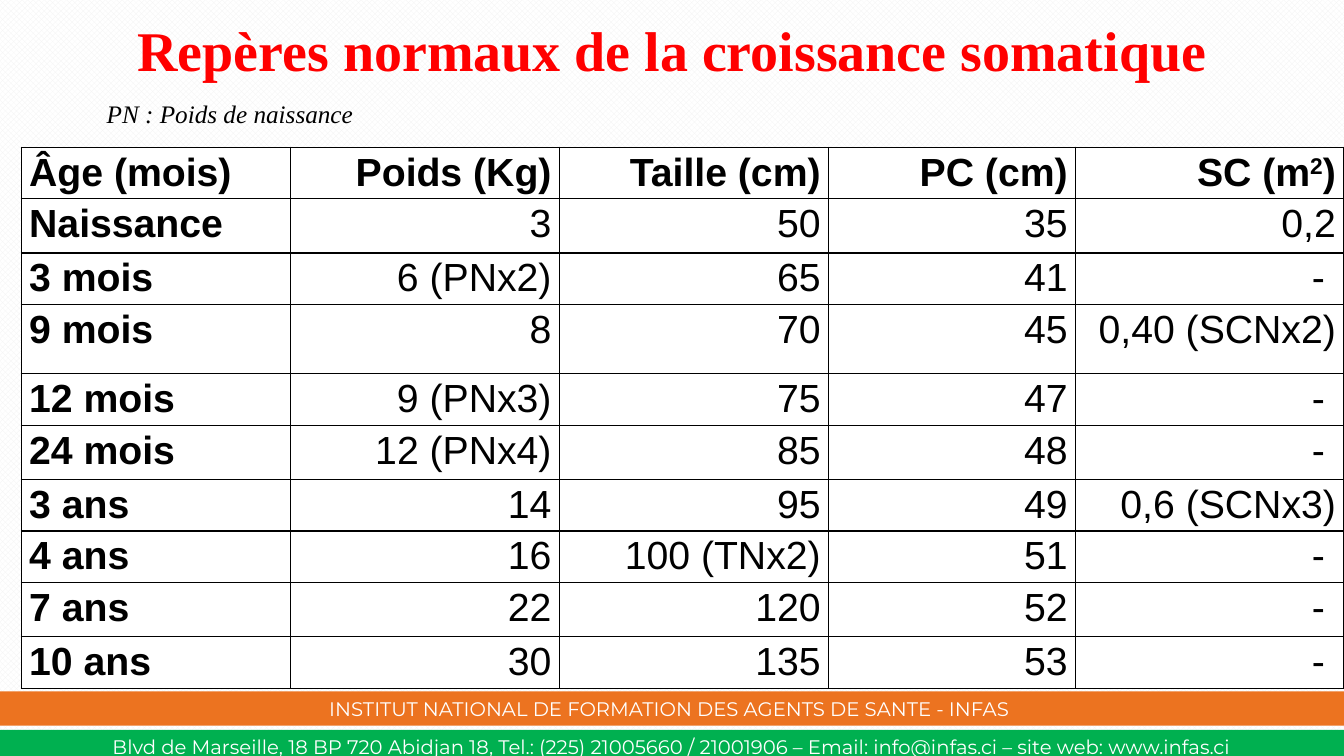
from lxml.etree import SubElement
from pptx import Presentation
from pptx.dml.color import RGBColor
from pptx.enum.dml import MSO_PATTERN
from pptx.enum.shapes import MSO_SHAPE
from pptx.enum.text import MSO_ANCHOR as ANCHOR, PP_ALIGN as ALIGN
from pptx.oxml.ns import qn
from pptx.util import Inches, Pt

COLS = [2.67, 2.67, 2.67, 2.45, 2.66]
ROWS = [0.51, 0.54, 0.51, 0.69, 0.51, 0.54, 0.51, 0.51, 0.54, 0.51]
GROWTH = [
    ["Âge (mois)", "Poids (Kg)", "Taille (cm)", "PC (cm)", "SC (m^2^)"],
    ["Naissance", "3", "50", "35", "0,2"],
    ["3 mois", "6 (PNx2)", "65", "41", "- "],
    ["9 mois", "8", "70", "45", "0,40 (SCNx2)"],
    ["12 mois", "9 (PNx3)", "75", "47", "- "],
    ["24 mois", "12 (PNx4)", "85", "48", "- "],
    ["3 ans", "14", "95", "49", "0,6 (SCNx3)"],
    ["4 ans", "16", "100 (TNx2)", "51", "- "],
    ["7 ans", "22", "120", "52", "- "],
    ["10 ans", "30", "135", "53", "- "],
]
TITLE = {"name": "Times New Roman", "size": Pt(40), "bold": True}
NOTE = {"name": "Times New Roman", "size": Pt(18), "italic": True}
FOOTER = {"name": "Montserrat", "size": Pt(14)}
CELL = {"name": "Arial", "size": Pt(28)}


def rgb(value):
    return RGBColor.from_string(value)


def write(tf, text, font, color, align, spacing=1.0):
    p = tf.paragraphs[0]
    p.alignment = align
    p.line_spacing = spacing
    for i, part in enumerate(text.split("^")):
        r = p.add_run()
        r.text = part
        for key, value in font.items():
            setattr(r.font, key, value)
        r.font.color.rgb = rgb(color)
        if i % 2:
            r._r.get_or_add_rPr().set("baseline", "30000")


def add_title(s, x, y, w, h):
    sp = s.shapes.title
    sp.left, sp.top, sp.width, sp.height = map(Inches, (x, y, w, h))
    tf = sp.text_frame
    tf.word_wrap = True
    tf.vertical_anchor = ANCHOR.BOTTOM
    write(tf, "Repères normaux de la croissance somatique", TITLE, "FF0000",
          ALIGN.CENTER, 0.9)


def add_note(s, x, y, w, h):
    tf = s.shapes.add_textbox(*map(Inches, (x, y, w, h))).text_frame
    tf.word_wrap = True
    write(tf, "PN : Poids de naissance", NOTE, "000000", ALIGN.JUSTIFY, 1.15)


def add_borders(cell):
    tcPr = cell._tc.get_or_add_tcPr()
    for side in ("lnL", "lnR", "lnT", "lnB"):
        ln = SubElement(tcPr, qn(f"a:{side}"), w=str(Pt(1)))
        fill = SubElement(ln, qn("a:solidFill"))
        SubElement(fill, qn("a:srgbClr"), val="000000")


def add_growth_table(s, x, y):
    box = map(Inches, (x, y, sum(COLS), sum(ROWS)))
    table = s.shapes.add_table(len(ROWS), len(COLS), *box).table
    table.first_row = table.horz_banding = False
    for col, width in zip(table.columns, COLS):
        col.width = Inches(width)
    for i, (row, height) in enumerate(zip(table.rows, ROWS)):
        row.height = Inches(height)
        for j, cell in enumerate(row.cells):
            add_borders(cell)
            cell.fill.solid()
            cell.fill.fore_color.rgb = rgb("FFFFFF")
            cell.margin_left = cell.margin_right = Inches(0.08)
            cell.margin_top = cell.margin_bottom = 0
            write(cell.text_frame, GROWTH[i][j], {**CELL, "bold": i == 0 or j == 0},
                  "000000", ALIGN.RIGHT if j else ALIGN.JUSTIFY, 1.08)


def add_band(s, x, y, w, h, color, text, anchor):
    sp = s.shapes.add_shape(MSO_SHAPE.RECTANGLE, *map(Inches, (x, y, w, h)))
    sp.shadow.inherit = False
    sp.fill.solid()
    sp.fill.fore_color.rgb = rgb(color)
    sp.line.fill.background()
    tf = sp.text_frame
    tf.word_wrap = True
    tf.margin_top = tf.margin_bottom = 0
    tf.vertical_anchor = anchor
    write(tf, text, FOOTER, "FFFFFF", ALIGN.CENTER)


def add_footer(s, x, y, w):
    add_band(s, x, y, w, 0.34, "EC7320",
             "INSTITUT NATIONAL DE FORMATION DES AGENTS DE SANTE - INFAS ",
             ANCHOR.MIDDLE)
    add_band(s, x, y + 0.38, w, 0.28, "00B050",
             "Blvd de Marseille, 18 BP 720 Abidjan 18, Tel.: (225) 21005660 / 21001906"
             " – Email: info@infas.ci – site web: www.infas.ci", ANCHOR.BOTTOM)


def main():
    prs = Presentation()
    prs.slide_width, prs.slide_height = Inches(13.33), Inches(7.5)
    s = prs.slides.add_slide(prs.slide_layouts[5])
    fill = s.background.fill
    fill.patterned()
    fill.pattern = MSO_PATTERN.SOLID_DIAMOND
    fill.fore_color.rgb = rgb("F2F2F2")
    fill.back_color.rgb = rgb("FFFFFF")
    add_footer(s, 0, 6.86, 13.33)
    add_title(s, 1, 0, 11.33, 0.88)
    add_note(s, 0.96, 0.88, 12.37, 0.5)
    add_growth_table(s, 0.21, 1.46)
    prs.save("out.pptx")


if __name__ == "__main__":
    main()
